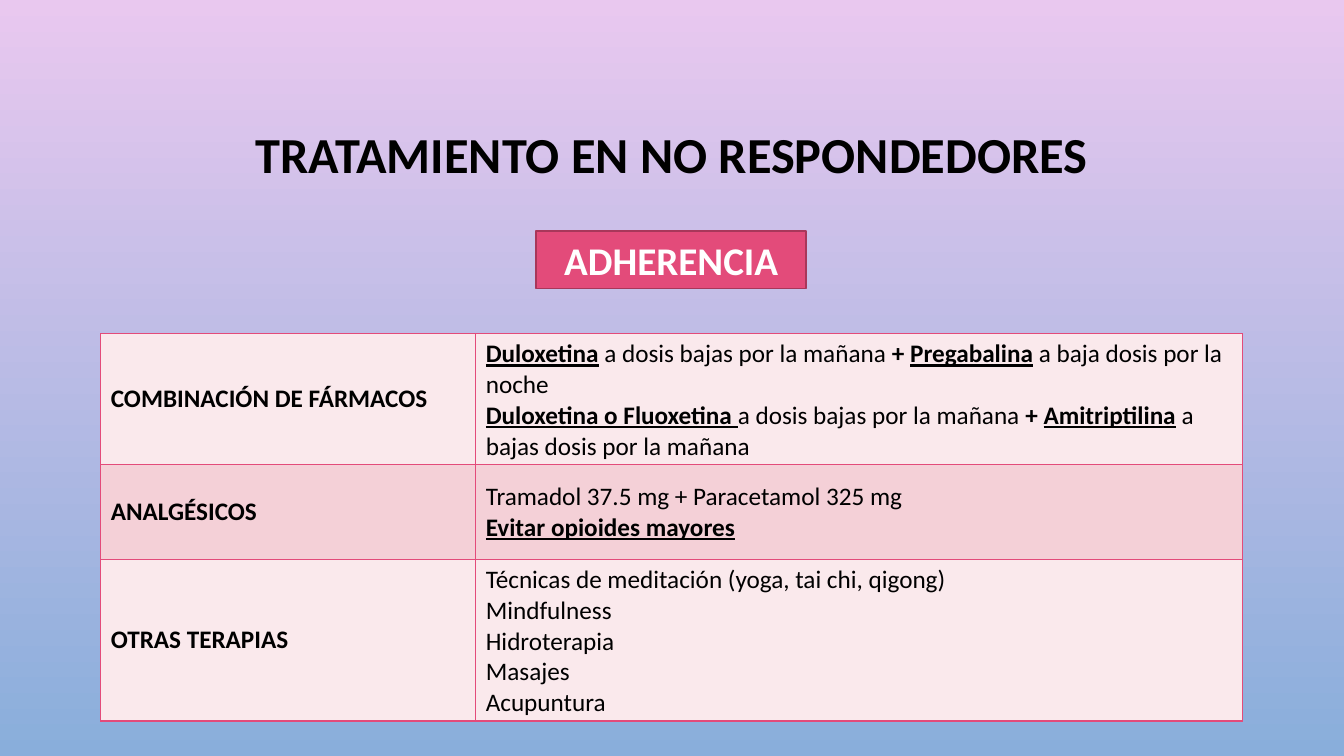
from dataclasses import dataclass

from lxml import etree
from pptx import Presentation
from pptx.dml.color import RGBColor
from pptx.enum.shapes import MSO_SHAPE
from pptx.enum.text import MSO_ANCHOR, MSO_AUTO_SIZE, PP_ALIGN
from pptx.oxml.ns import qn
from pptx.util import Cm, Pt

RECTANGLE = MSO_SHAPE.RECTANGLE
MIDDLE = MSO_ANCHOR.MIDDLE
CENTER = PP_ALIGN.CENTER
FIT_SHAPE = MSO_AUTO_SIZE.SHAPE_TO_FIT_TEXT

BLACK = RGBColor(0x00, 0x00, 0x00)
WHITE = RGBColor(0xFF, 0xFF, 0xFF)
PINK = RGBColor(0xE3, 0x4B, 0x7A)
DARK_PINK = RGBColor(0xA8, 0x37, 0x5A)
PALE_ROW = RGBColor(0xFA, 0xE9, 0xEC)
ROSE_ROW = RGBColor(0xF4, 0xD0, 0xD7)
BACKGROUND_COLORS = (RGBColor(0xE9, 0xC8, 0xEF), RGBColor(0x89, 0xAE, 0xDB))

COLUMN_WIDTHS = (Cm(9.45), Cm(19.33))
BORDER_TAGS = ("a:lnL", "a:lnR", "a:lnT", "a:lnB")


@dataclass(frozen=True)
class Span:
    text: str
    bold: bool = False
    underline: bool = False


@dataclass(frozen=True)
class Treatment:
    name: str
    lines: list[list[Span]]
    height: Cm
    fill: RGBColor


def drug(text: str) -> Span:
    return Span(text, bold=True, underline=True)


TREATMENTS = [
    Treatment(
        "COMBINACIÓN DE FÁRMACOS",
        [
            [
                drug("Duloxetina"),
                Span(" a dosis bajas por la mañana "),
                Span("+ ", bold=True),
                drug("Pregabalina"),
                Span(" a baja dosis por la noche"),
            ],
            [
                drug("Duloxetina o Fluoxetina "),
                Span("a dosis bajas por la mañana "),
                Span("+ ", bold=True),
                drug("Amitriptilina"),
                Span(" a bajas dosis por la mañana"),
            ],
        ],
        Cm(3.3),
        PALE_ROW,
    ),
    Treatment(
        "ANALGÉSICOS",
        [
            [Span("Tramadol 37.5 mg + Paracetamol 325 mg")],
            [drug("Evitar opioides mayores")],
        ],
        Cm(2.39),
        ROSE_ROW,
    ),
    Treatment(
        "OTRAS TERAPIAS",
        [
            [Span("Técnicas de meditación (yoga, tai chi, qigong)")],
            [Span("Mindfulness")],
            [Span("Hidroterapia")],
            [Span("Masajes")],
            [Span("Acupuntura")],
        ],
        Cm(4.06),
        PALE_ROW,
    ),
]


def write_lines(text_frame, lines: list[list[Span]], size: int, color: RGBColor, **paragraph_format) -> None:
    for index, line in enumerate(lines):
        paragraph = text_frame.paragraphs[0] if index == 0 else text_frame.add_paragraph()
        for name, value in paragraph_format.items():
            setattr(paragraph, name, value)
        for span in line:
            run = paragraph.add_run()
            run.text = span.text
            font_format = {
                "name": "Calibri",
                "size": Pt(size),
                "bold": span.bold,
                "underline": span.underline,
            }
            for name, value in font_format.items():
                setattr(run.font, name, value)
            run.font.color.rgb = color


def add_borders(cell) -> None:
    properties = cell._tc.get_or_add_tcPr()
    for tag in BORDER_TAGS:
        line = etree.SubElement(properties, qn(tag), w=str(Pt(1)))
        fill = etree.SubElement(line, qn("a:solidFill"))
        etree.SubElement(fill, qn("a:srgbClr"), val=str(PINK))


def paint_background(slide) -> None:
    fill = slide.background.fill
    fill.gradient()
    fill.gradient_angle = 270
    for stop, color in zip(fill.gradient_stops, BACKGROUND_COLORS):
        stop.color.rgb = color


def add_title(slide) -> None:
    title = slide.shapes.add_textbox(Cm(2.54), Cm(1.73), Cm(28.78), Cm(4.45))
    frame_format = {"word_wrap": True, "vertical_anchor": MIDDLE}
    for name, value in frame_format.items():
        setattr(title.text_frame, name, value)
    line = [Span("TRATAMIENTO EN NO RESPONDEDORES", bold=True)]
    write_lines(title.text_frame, [line], 36, BLACK, alignment=CENTER, line_spacing=0.9)


def add_adherence(slide) -> None:
    shape = slide.shapes.add_shape(RECTANGLE, Cm(13.51), Cm(5.82), Cm(6.81), Cm(1.45))
    shape.shadow.inherit = False
    shape.fill.solid()
    shape.fill.fore_color.rgb = PINK
    shape.line.color.rgb = DARK_PINK
    shape.line.width = Pt(1.25)
    shape.text_frame.auto_size = FIT_SHAPE
    write_lines(shape.text_frame, [[Span("ADHERENCIA", bold=True)]], 28, WHITE, alignment=CENTER)


def add_treatments(slide) -> None:
    height = sum(treatment.height for treatment in TREATMENTS)
    table = slide.shapes.add_table(
        len(TREATMENTS), len(COLUMN_WIDTHS), Cm(2.54), Cm(8.41), sum(COLUMN_WIDTHS), height
    ).table
    table_format = {"first_row": False, "horz_banding": False}
    for name, value in table_format.items():
        setattr(table, name, value)
    for column, width in zip(table.columns, COLUMN_WIDTHS):
        column.width = width
    for row, treatment in zip(table.rows, TREATMENTS):
        row.height = treatment.height
        contents = ([[Span(treatment.name, bold=True)]], treatment.lines)
        for cell, lines in zip(row.cells, contents):
            add_borders(cell)
            cell.fill.solid()
            cell.fill.fore_color.rgb = treatment.fill
            cell.vertical_anchor = MIDDLE
            write_lines(cell.text_frame, lines, 18, BLACK)


def main() -> None:
    presentation = Presentation()
    presentation.slide_width = Cm(33.87)
    presentation.slide_height = Cm(19.05)
    slide = presentation.slides.add_slide(presentation.slide_layouts[6])
    paint_background(slide)
    add_title(slide)
    add_treatments(slide)
    add_adherence(slide)
    presentation.save("out.pptx")


if __name__ == "__main__":
    main()
